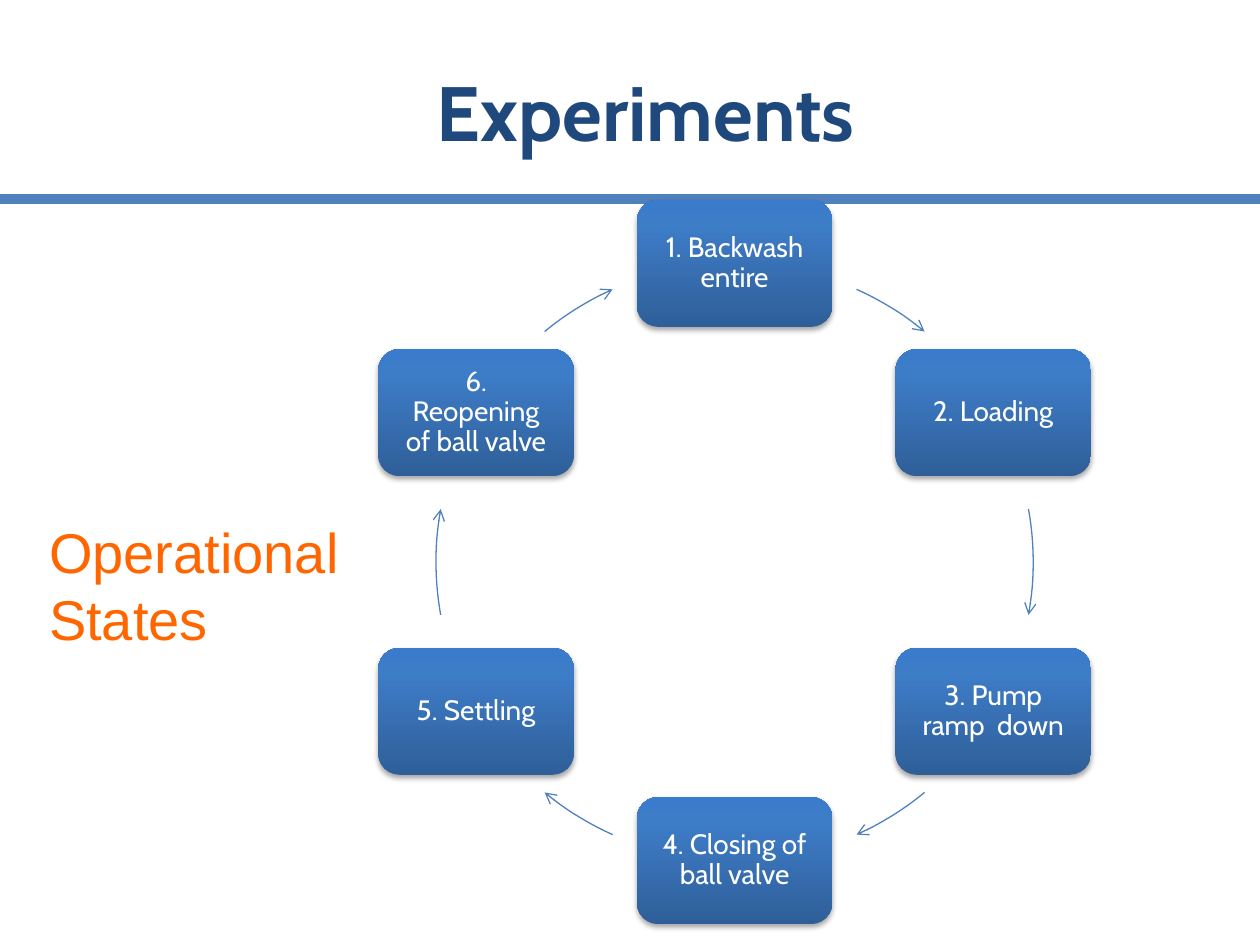
"""Build the slide showing the cycle of operational states."""
import math
from copy import deepcopy
from dataclasses import dataclass

from lxml import etree
from pptx import Presentation
from pptx import util as u
from pptx.dml import color
from pptx.enum import shapes, text
from pptx.oxml import ns

BLUE, NAVY, ORANGE, WHITE = "4F81BD", "1F497D", "FF6600", "FFFFFF"
GRADIENT = ((0, "2F5F99"), (0.8, "3D7CC7"), (1, "3A7CCB"))
CENTER_X, CENTER_Y, RADIUS = 14.81, 11.33, 6.02
STAGE_WIDTH, STAGE_HEIGHT = 3.94, 2.56


@dataclass(frozen=True)
class Stage:
    label: str
    arrow_middle: float
    arrow_sweep: float


STAGES = (
    Stage("1. Backwash entire", 31.8, 15.4),
    Stage("2. Loading", 90, 20.4),
    Stage("3. Pump ramp  down", 148.2, 15.4),
    Stage("4. Closing of ball valve", 211.8, 15.4),
    Stage("5. Settling", 270, 20.4),
    Stage("6. Reopening of ball valve", 328.2, 15.4),
)


def rgb(code: str) -> color.RGBColor:
    return color.RGBColor.from_string(code)


def box(left: float, top: float, width: float, height: float) -> list[u.Cm]:
    return [u.Cm(length) for length in (left, top, width, height)]


def add_node(parent, tag: str, **attributes: str):
    return etree.SubElement(parent, ns.qn(tag), attributes)


def write(shape, wording: str, *, size: float, font: str, ink: str,
          bold: bool = False, align=text.PP_ALIGN.LEFT,
          anchor=text.MSO_ANCHOR.TOP, spacing: float = 1.0,
          inset: float | None = None) -> None:
    frame = shape.text_frame
    frame.word_wrap = True
    frame.vertical_anchor = anchor
    if inset is not None:
        frame.margin_left = frame.margin_right = u.Cm(inset)
        frame.margin_top = frame.margin_bottom = u.Cm(inset)
    paragraph = frame.paragraphs[0]
    paragraph.alignment = align
    paragraph.line_spacing = spacing
    run = paragraph.add_run()
    run.text = wording
    run.font.size, run.font.name, run.font.bold = u.Pt(size), font, bold
    run.font.color.rgb = rgb(ink)


def draw_rule(slide) -> None:
    rule = slide.shapes.add_connector(
        shapes.MSO_CONNECTOR.STRAIGHT, u.Cm(0), u.Cm(4.01), u.Cm(25.4), u.Cm(4.01))
    rule.line.color.rgb = rgb(BLUE)
    rule.line.width = u.Pt(6)
    add_node(rule._element.spPr, "a:effectLst")


def apply_gradient(shape) -> None:
    shape.fill.gradient()
    shape.fill.gradient_angle = 90
    stop_list = shape._element.spPr.find(".//" + ns.qn("a:gsLst"))
    stop_list.append(deepcopy(stop_list[0]))
    for stop, (position, code) in zip(shape.fill.gradient_stops, GRADIENT):
        stop.position = position
        stop.color.rgb = rgb(code)


def apply_shadow(shape) -> None:
    shape.shadow.inherit = False
    effects = shape._element.spPr.find(ns.qn("a:effectLst"))
    shadow = add_node(effects, "a:outerShdw", blurRad="40000", dist="23000",
                      dir="5400000", rotWithShape="0")
    shade = add_node(shadow, "a:srgbClr", val="000000")
    add_node(shade, "a:alpha", val="35000")


def draw_stage(slide, stage: Stage, angle: float) -> None:
    left = CENTER_X + RADIUS * math.sin(math.radians(angle)) - STAGE_WIDTH / 2
    top = CENTER_Y - RADIUS * math.cos(math.radians(angle)) - STAGE_HEIGHT / 2
    card = slide.shapes.add_shape(shapes.MSO_SHAPE.ROUNDED_RECTANGLE,
                                  *box(left, top, STAGE_WIDTH, STAGE_HEIGHT))
    apply_gradient(card)
    card.line.fill.background()
    apply_shadow(card)
    write(card, stage.label, size=16, font="Cabin", ink=WHITE, spacing=0.9, inset=0.3,
          align=text.PP_ALIGN.CENTER, anchor=text.MSO_ANCHOR.MIDDLE)


def draw_arrow(slide, stage: Stage) -> None:
    arrow = slide.shapes.add_shape(
        shapes.MSO_SHAPE.ARC,
        *box(CENTER_X - RADIUS, CENTER_Y - RADIUS, 2 * RADIUS, 2 * RADIUS))
    start = stage.arrow_middle - stage.arrow_sweep / 2 - 90
    for index, angle in enumerate((start, start + stage.arrow_sweep)):
        arrow.adjustments[index] = angle % 360 * 0.6
    arrow.fill.background()
    arrow.line.color.rgb = rgb(BLUE)
    arrow.line.width = u.Pt(0.75)
    arrow.shadow.inherit = False
    add_node(arrow.line._get_or_add_ln(), "a:tailEnd", type="arrow")


def main() -> None:
    deck = Presentation()
    deck.slide_width, deck.slide_height = u.Cm(25.4), u.Cm(19.05)
    slide = deck.slides.add_slide(deck.slide_layouts[6])
    draw_rule(slide)
    title = slide.shapes.add_textbox(*box(1.27, 0.64, 23.5, 3.18))
    write(title, "Experiments", size=44, font="Cabin", ink=NAVY, bold=True,
          align=text.PP_ALIGN.CENTER, anchor=text.MSO_ANCHOR.MIDDLE)
    for index, stage in enumerate(STAGES):
        draw_stage(slide, stage, index * 360 / len(STAGES))
        draw_arrow(slide, stage)
    caption = slide.shapes.add_textbox(*box(0.74, 10.31, 6.65, 3))
    write(caption, "Operational States", size=32, font="Arial", ink=ORANGE)
    deck.save("out.pptx")


if __name__ == "__main__":
    main()
